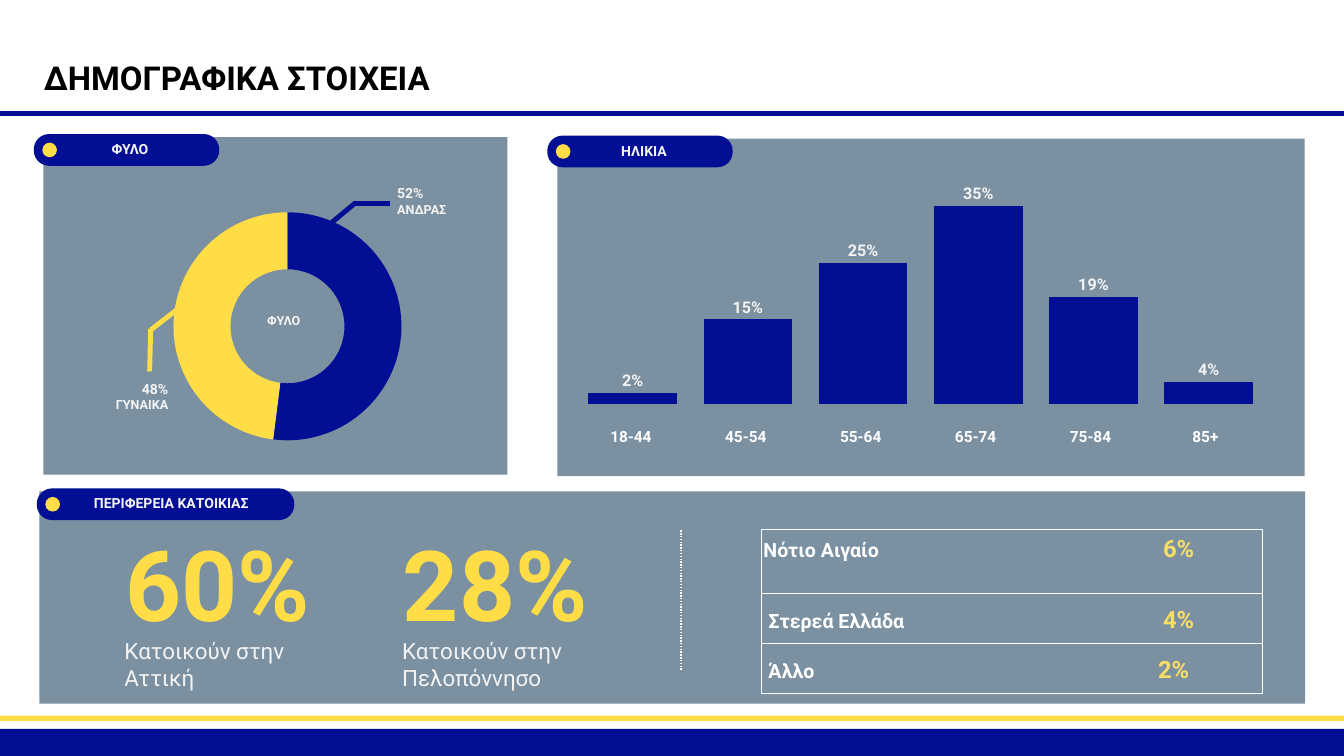
import pptx
import pptx.util
import pptx.chart.data
import pptx.dml.color
import pptx.enum.chart
import pptx.enum.dml
import pptx.enum.shapes
import pptx.enum.text
import pptx.oxml
import pptx.oxml.ns
from lxml import etree

Inches, Pt = pptx.util.Inches, pptx.util.Pt
Shape = pptx.enum.shapes.MSO_SHAPE
Align = pptx.enum.text.PP_ALIGN
Anchor = pptx.enum.text.MSO_ANCHOR
Chart = pptx.enum.chart
qn = pptx.oxml.ns.qn

FONT = "Roboto"
COLORS = {"navy": "020F94", "gold": "FFDD47", "slate": "7B90A1", "pale": "F3F3F3",
          "white": "FFFFFF", "black": "000000", "straw": "F9DE65"}

TITLE = "ΔΗΜΟΓΡΑΦΙΚΑ ΣΤΟΙΧΕΙΑ"
PANELS = [(0.78, 9.75, 25.12, 4.21), (11.06, 2.75, 14.83, 6.7), (0.86, 2.72, 9.21, 6.7)]
# text, tag left, top, width, text left
TAGS = [("ΦΥΛΟ", 0.67, 2.66, 3.68, 0.74),
        ("ΗΛΙΚΙΑ", 10.86, 2.69, 3.68, 10.94),
        ("ΠΕΡΙΦΕΡΕΙΑ ΚΑΤΟΙΚΙΑΣ", 0.73, 9.69, 5.11, 1.56)]
GENDER = [("52%", "ΑΝΔΡΑΣ", 52, "navy", (7.88, 3.67), Align.LEFT),
          ("48%", "ΓΥΝΑΙΚΑ", 48, "gold", (1.44, 7.55), Align.RIGHT)]
LEADERS = [((6.42, 4.55), (7.06, 4.02), "navy"), ((7.02, 4.04), (7.73, 4.04), "navy"),
           ((3, 6.54), (3.8, 5.92), "gold"), ((2.97, 7.37), (2.99, 6.52), "gold")]
AGES = [("18-44", 0.02), ("45-54", 0.15), ("55-64", 0.25),
        ("65-74", 0.35), ("75-84", 0.19), ("85+", 0.04)]
REGIONS = [("60%", "Κατοικούν στην Αττική", 1.69, 3.71),
           ("28%", "Κατοικούν στην Πελοπόννησο", 7.2, 4.91)]
# name, share, row height, left inset, share left, anchor
OTHERS = [("Νότιο Αιγαίο", "6%", 1.27, 0.04, 7.97, Anchor.TOP),
          ("Στερεά Ελλάδα", "4%", 0.99, 0.14, 7.97, Anchor.MIDDLE),
          ("Άλλο", "2%", 0.99, 0.14, 7.87, Anchor.MIDDLE)]

deck = pptx.Presentation()
deck.slide_width, deck.slide_height = Inches(26.67), Inches(15)
slide = deck.slides.add_slide(deck.slide_layouts[6])
shapes = slide.shapes


def rgb(name):
    return pptx.dml.color.RGBColor.from_string(COLORS[name])


def style(font, size, color, bold=True):
    font.name, font.size, font.bold = FONT, Pt(size), bold
    font.color.rgb = rgb(color)


def text(lines, x, y, w, h, size=20, color="pale", bold=True, align=Align.CENTER,
         inset=0, anchor=Anchor.TOP, space=None):
    """Lines are strings, or (string, size) pairs."""
    frame = shapes.add_textbox(Inches(x), Inches(y), Inches(w), Inches(h)).text_frame
    frame.word_wrap, frame.vertical_anchor = True, anchor
    frame.margin_left = frame.margin_right = Inches(inset)
    frame.margin_top = frame.margin_bottom = Inches(inset)
    for i, line in enumerate([lines] if isinstance(lines, str) else lines):
        words, points = (line, size) if isinstance(line, str) else line
        para = frame.paragraphs[0] if i == 0 else frame.add_paragraph()
        para.alignment = align
        if space:
            para.line_spacing = space
        run = para.add_run()
        run.text = words
        style(run.font, points, color, bold)


def block(kind, x, y, w, h, color):
    shape = shapes.add_shape(kind, Inches(x), Inches(y), Inches(w), Inches(h))
    shape.shadow.inherit = False
    shape.fill.solid()
    shape.fill.fore_color.rgb = rgb(color)
    shape.line.fill.background()
    return shape


def line(start, end, color, width):
    link = shapes.add_connector(pptx.enum.shapes.MSO_CONNECTOR.STRAIGHT,
                                *(Inches(v) for v in (*start, *end)))
    link.line.color.rgb, link.line.width = rgb(color), Pt(width)
    etree.SubElement(link._element.spPr, qn("a:effectLst"))
    return link


def chart(kind, names, values, box, plot):
    """Add a one-series chart whose plot area has a fixed place."""
    data = pptx.chart.data.CategoryChartData()
    data.categories = names
    data.add_series("Series 1", values)
    made = shapes.add_chart(kind, *(Inches(v) for v in box), data).chart
    made.has_legend = made.has_title = False
    style(made.font, 10, "black", False)
    area = made._chartSpace.find(".//" + qn("c:plotArea"))
    for old in area.findall(qn("c:layout")):
        area.remove(old)
    layout = etree.Element(qn("c:layout"))
    manual = etree.SubElement(layout, qn("c:manualLayout"))
    for key, value in zip(("layoutTarget", "xMode", "yMode", "x", "y", "w", "h"),
                          ("inner", "edge", "edge", *plot)):
        etree.SubElement(manual, qn("c:" + key)).set("val", str(value))
    area.insert(0, layout)
    return made


def border(cell, width):
    props = cell._tc.get_or_add_tcPr()
    for side in ("lnL", "lnR", "lnT", "lnB"):
        edge = etree.SubElement(props, qn("a:" + side), w=str(Pt(width)))
        fill = etree.SubElement(edge, qn("a:solidFill"))
        etree.SubElement(fill, qn("a:srgbClr"), val=COLORS["white"])


# Panels, title and tags
for panel in PANELS:
    block(Shape.RECTANGLE, *panel, "slate")
line((0, 2.25), (26.67, 2.25), "navy", 6)
text(TITLE, 0.81, 1.08, 16.34, 0.89, size=47, color="black", align=Align.LEFT, inset=0.06)
for name, x, y, w, left in TAGS:
    block(Shape.ROUNDED_RECTANGLE, x, y, w, 0.63, "navy").adjustments[0] = 0.482
    text(name, left, y + 0.13, 3.68, 0.37)
    block(Shape.OVAL, x + 0.17, y + 0.17, 0.29, 0.29, "gold")

# Gender
ring = chart(Chart.XL_CHART_TYPE.DOUGHNUT, ["1", "2"], [g[2] for g in GENDER],
             (3.42, 4.19, 4.57, 4.57), (0.005, 0.005, 0.99, 0.99))
ring.plots[0].has_data_labels = False
ring._chartSpace.find(".//" + qn("c:holeSize")).set("val", "60")
for i, (share, name, value, color, place, align) in enumerate(GENDER):
    fill = ring.plots[0].series[0].points[i].format.fill
    fill.solid()
    fill.fore_color.rgb = rgb(color)
    text([share, (name, 18)], *place, 1.9, 0.71, align=align)
for start, end, color in LEADERS:
    line(start, end, color, 7)
text("ΦΥΛΟ", 4.49, 6.21, 2.28, 0.53, size=18)

# Age
bars = chart(Chart.XL_CHART_TYPE.COLUMN_CLUSTERED, [str(i + 1) for i in range(len(AGES))],
             [a[1] for a in AGES], (11.19, 3.33, 14.01, 4.81), (0.016, 0.04, 0.979, 0.936))
for axis in (bars.category_axis, bars.value_axis):
    axis.has_major_gridlines = False
    axis.major_tick_mark = axis.minor_tick_mark = Chart.XL_TICK_MARK.NONE
    axis.tick_label_position = Chart.XL_TICK_LABEL_POSITION.NONE
    axis.format.line.fill.background()
scale = bars.value_axis
scale.minimum_scale, scale.maximum_scale, scale.major_unit = 0, 0.4, 0.1
plot = bars.plots[0]
plot.gap_width, plot.overlap, plot.vary_by_categories = 30, -10, False
fill = plot.series[0].format.fill
fill.solid()
fill.fore_color.rgb = rgb("navy")
labels = plot.series[0].data_labels
labels.show_value = True
labels.position = Chart.XL_LABEL_POSITION.OUTSIDE_END
labels.number_format, labels.number_format_is_linked = "#,##0%", False
style(labels.font, 23, "pale")
for i, (age, value) in enumerate(AGES):
    text(age, 11.18 + 2.28 * i, 8.33, 2.68, 0.6, size=22, color="white", inset=0.06,
         anchor=Anchor.MIDDLE, space=1.1)

# Region
for share, place, x, w in REGIONS:
    text(share, x, 10.38, 5.26, 2.58, size=140, color="gold")
    text(place, x + 0.78, 12.64, w, 1.75, size=32, bold=False, align=Align.LEFT)
split = line((13.51, 13.29), (13.51, 10.5), "white", 2)
split.line.dash_style = pptx.enum.dml.MSO_LINE.ROUND_DOT

grid = shapes.add_table(len(OTHERS), 1, Inches(15.11), Inches(10.51), Inches(9.93),
                        Inches(sum(o[2] for o in OTHERS))).table
grid.first_row = grid.horz_banding = False
for i, (name, share, height, inset, left, anchor) in enumerate(OTHERS):
    grid.rows[i].height = Inches(height)
    cell = grid.cell(i, 0)
    border(cell, 0.75)
    cell.fill.background()
    cell.vertical_anchor = anchor
    cell.margin_left = Inches(inset)
    cell.margin_right = cell.margin_top = cell.margin_bottom = Inches(0.04)
    para = cell.text_frame.paragraphs[0]
    para.line_spacing = 1.15
    tabs = etree.SubElement(para._p.get_or_add_pPr(), qn("a:tabLst"))
    etree.SubElement(tabs, qn("a:tab"), pos=str(Inches(left - inset)), algn="l")
    for words, size, color in ((name + "\t", 28, "white"), (share, 34, "straw")):
        run = para.add_run()
        run.text = words
        style(run.font, size, color)

# Footer
block(Shape.RECTANGLE, 0, 14.46, 26.67, 0.54, "navy")
block(Shape.RECTANGLE, 0, 14.2, 26.67, 0.11, "gold")

deck.save("out.pptx")
